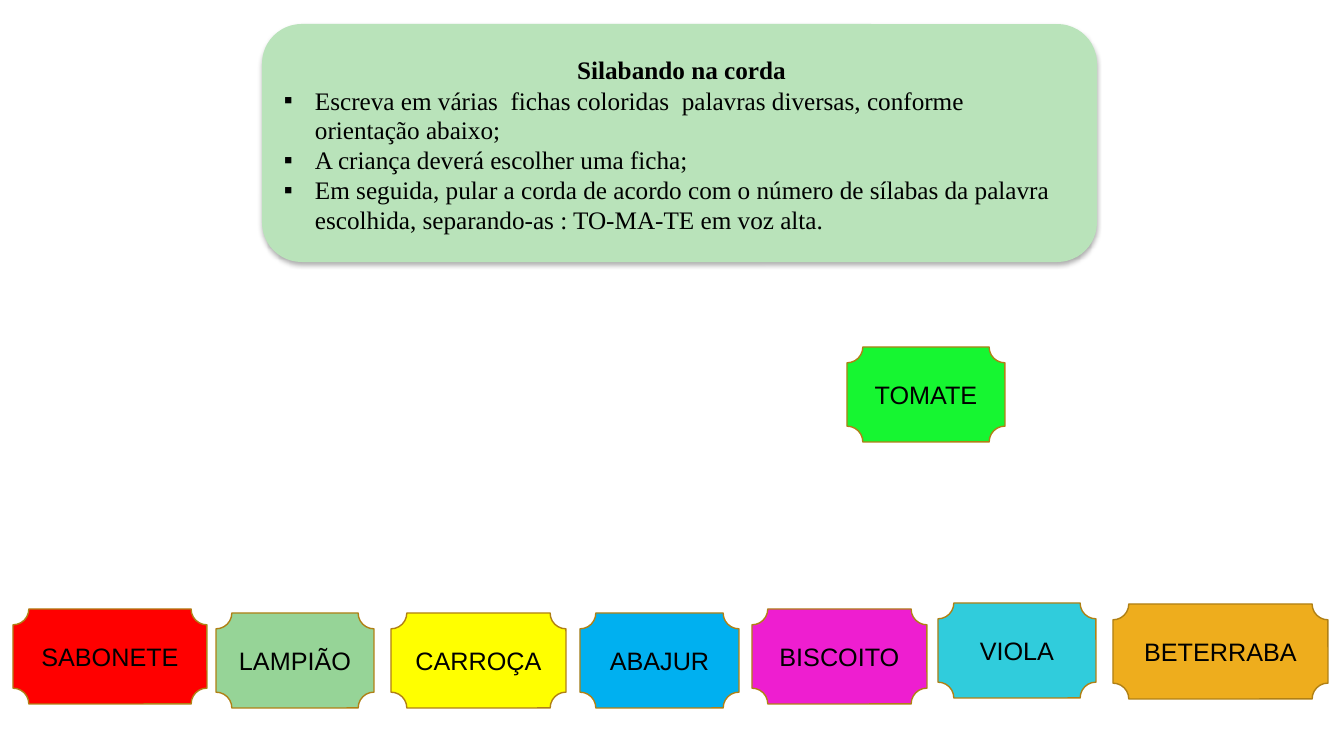
from lxml import etree
from pptx import Presentation
from pptx import util as u
from pptx.dml.color import RGBColor
from pptx.enum import shapes, text
from pptx.oxml import ns

PX = 914400 / 100.8
COLORS = {
    "ink": "000000",
    "card": "B9E3BA",
    "plaque line": "B08015",
    "TOMATE": "16F631",
    "SABONETE": "FF0000",
    "LAMPIÃO": "96D497",
    "CARROÇA": "FFFF00",
    "ABAJUR": "00B0F0",
    "BISCOITO": "EE1ED0",
    "VIOLA": "30CCDC",
    "BETERRABA": "EEAD1D",
}
TITLE = "Silabando na corda"
STEPS = [
    "Escreva em várias  fichas coloridas  palavras diversas, conforme orientação abaixo;",
    "A criança deverá escolher uma ficha;",
    "Em seguida, pular a corda de acordo com o número de sílabas da palavra "
    "escolhida, separando-as : TO-MA-TE em voz alta.",
]
PLAQUE_HEIGHT = 95
PLAQUES = [
    ("TOMATE", 847, 347, 158),
    ("SABONETE", 13, 609, 194),
    ("LAMPIÃO", 216, 613, 158),
    ("CARROÇA", 391, 613, 175),
    ("ABAJUR", 580, 613, 159),
    ("BISCOITO", 752, 609, 175),
    ("VIOLA", 938, 603, 158),
    ("BETERRABA", 1113, 604, 215),
]


def px(length):
    return u.Emu(round(length * PX))


def color(name):
    return RGBColor.from_string(COLORS[name])


def place(shape, left, top, width, height):
    shape.left, shape.top = px(left), px(top)
    shape.width, shape.height = px(width), px(height)


def format_text(shape, font_name, alignment, bold=False):
    frame = shape.text_frame
    frame.word_wrap = True
    frame.auto_size = text.MSO_AUTO_SIZE.NONE
    frame.vertical_anchor = text.MSO_ANCHOR.MIDDLE
    frame.margin_left = frame.margin_right = 0
    frame.margin_top = frame.margin_bottom = 0
    for paragraph in frame.paragraphs:
        paragraph.alignment = alignment
        paragraph.space_before = paragraph.space_after = u.Pt(0)
        for run in paragraph.runs:
            run.font.name = font_name
            run.font.size = u.Pt(18)
            run.font.bold = bold
            run.font.color.rgb = color("ink")


def add_preset(slide, preset, box, fill):
    shape = slide.shapes.add_shape(preset, *map(px, box))
    shape.shadow.inherit = False
    shape.fill.solid()
    shape.fill.fore_color.rgb = color(fill)
    return shape


def add_soft_shadow(shape):
    effects = shape._element.spPr.find(ns.qn("a:effectLst"))
    shadow = etree.SubElement(
        effects, ns.qn("a:outerShdw"), blurRad=str(u.Pt(3.5)),
        dist=str(u.Pt(2.2)), dir="5400000", algn="t", rotWithShape="0")
    tone = etree.SubElement(shadow, ns.qn("a:srgbClr"), val=COLORS["ink"])
    etree.SubElement(tone, ns.qn("a:alpha"), val="32000")


def add_square_bullet(paragraph):
    properties = paragraph._p.get_or_add_pPr()
    properties.set("marL", str(px(31)))
    properties.set("indent", str(-px(31)))
    etree.SubElement(properties, ns.qn("a:buFont"), typeface="Arial")
    etree.SubElement(properties, ns.qn("a:buChar"), char="▪")


def add_instructions(slide, left, top, width, height):
    card = add_preset(slide, shapes.MSO_SHAPE.ROUNDED_RECTANGLE,
                      (left, top, width, height), "card")
    card.line.fill.background()
    add_soft_shadow(card)
    slide.shapes._spTree.insert(2, card._element)

    title = slide.shapes.title
    place(title, left + 25, top + 30, width - 46, 30)
    title.text_frame.text = TITLE
    format_text(title, "Times New Roman", text.PP_ALIGN.CENTER, True)

    body = slide.placeholders[1]
    place(body, left + 22, top + 61, width - 46, 150)
    body.text_frame.text = "\n".join(STEPS)
    for paragraph in body.text_frame.paragraphs:
        add_square_bullet(paragraph)
        paragraph.line_spacing = u.Pt(21.4)
    format_text(body, "Times New Roman", text.PP_ALIGN.LEFT)


def add_plaque(slide, word, left, top, width):
    plaque = add_preset(slide, shapes.MSO_SHAPE.PLAQUE,
                        (left, top, width, PLAQUE_HEIGHT), word)
    plaque.line.color.rgb = color("plaque line")
    plaque.line.width = u.Pt(1)
    plaque.text_frame.text = word
    format_text(plaque, "Arial", text.PP_ALIGN.CENTER)


def main():
    presentation = Presentation()
    presentation.slide_width, presentation.slide_height = px(1344), px(756)
    slide = presentation.slides.add_slide(presentation.slide_layouts[1])
    add_instructions(slide, 262, 24, 835, 238)
    for plaque in PLAQUES:
        add_plaque(slide, *plaque)
    presentation.save("out.pptx")


if __name__ == "__main__":
    main()
